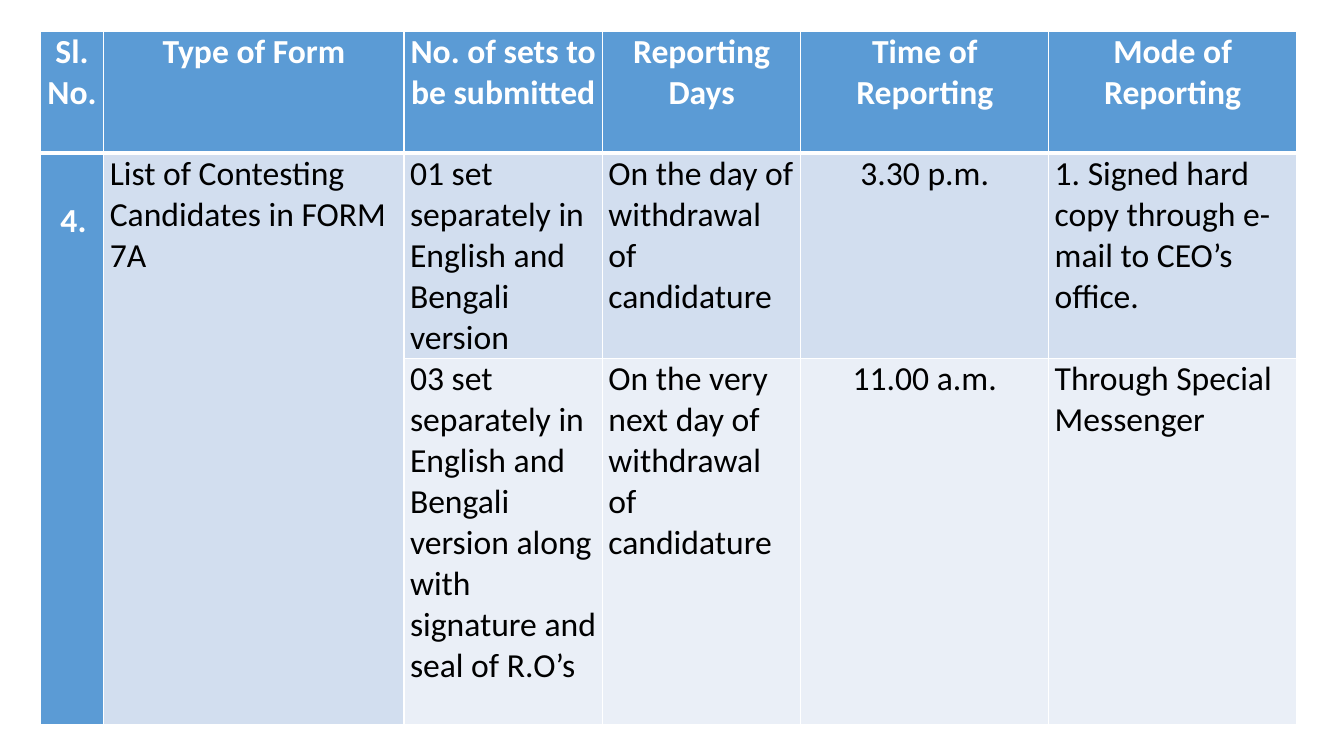
import pptx
import pptx.dml.color
import pptx.enum.text
import pptx.oxml.ns
import pptx.util
from lxml import etree

Inches = pptx.util.Inches
RGBColor = pptx.dml.color.RGBColor
ALIGN = pptx.enum.text.PP_ALIGN

WHITE = RGBColor(0xFF, 0xFF, 0xFF)
BLACK = RGBColor(0x00, 0x00, 0x00)
HEADER_BLUE = RGBColor(0x5B, 0x9B, 0xD5)
FIRST_BAND = RGBColor(0xD2, 0xDE, 0xEF)
SECOND_BAND = RGBColor(0xEA, 0xEF, 0xF7)

COLUMN_WIDTHS = [0.63, 2.98, 1.97, 1.97, 2.46, 2.46]
ROW_HEIGHTS = [1.21, 2.02, 3.64]
BAND_FILLS = [HEADER_BLUE, FIRST_BAND, SECOND_BAND]
SERIAL_COLUMN, FORM_COLUMN, TIME_COLUMN = 0, 1, 4

REPORTING_ROWS = [
    ["Sl. No.", "Type of Form", "No. of sets to be submitted",
     "Reporting Days", "Time of Reporting", "Mode of Reporting"],
    ["4.", "List of Contesting Candidates in FORM 7A",
     "01 set separately in English and Bengali version",
     "On the day of withdrawal of candidature", "3.30 p.m.",
     "1. Signed hard copy through e-mail to CEO’s office."],
    ["", "", "03 set separately in English and Bengali version along with "
     "signature and seal of R.O’s",
     "On the very next day of withdrawal of candidature", "11.00 a.m.",
     "Through Special Messenger"],
]


def set_borders(cell, top, bottom):
    properties = cell._tc.get_or_add_tcPr()
    qn = pptx.oxml.ns.qn
    for side, points in (("L", 1), ("R", 1), ("T", top), ("B", bottom)):
        line = etree.SubElement(properties, qn(f"a:ln{side}"), w=str(pptx.util.Pt(points)))
        fill = etree.SubElement(line, qn("a:solidFill"))
        etree.SubElement(fill, qn("a:srgbClr"), val=str(WHITE))


def format_cell(cell, text, row, column):
    is_header = row == 0
    is_strong = is_header or column == SERIAL_COLUMN
    set_borders(cell, top=3 if row == 1 else 1, bottom=3 if is_header else 1)
    cell.fill.solid()
    cell.fill.fore_color.rgb = HEADER_BLUE if is_strong else BAND_FILLS[row]
    cell.margin_left = cell.margin_right = Inches(0.06)
    cell.margin_top = cell.margin_bottom = 0
    cell.text_frame.text = text
    paragraph = cell.text_frame.paragraphs[0]
    is_centred = is_header or column == TIME_COLUMN
    paragraph.alignment = ALIGN.CENTER if is_centred else ALIGN.LEFT
    paragraph.font.size = pptx.util.Pt(24)
    for run in paragraph.runs:
        run.font.name = "Calibri"
        run.font.size = pptx.util.Pt(24)
        run.font.bold = is_strong
        run.font.color.rgb = WHITE if is_strong else BLACK


def add_reporting_table(slide, left, top, width, height):
    table = slide.shapes.add_table(
        len(ROW_HEIGHTS), len(COLUMN_WIDTHS), left, top, width, height).table
    for column, share in zip(table.columns, COLUMN_WIDTHS):
        column.width = int(width * share / sum(COLUMN_WIDTHS))
    for row, share in zip(table.rows, ROW_HEIGHTS):
        row.height = int(height * share / sum(ROW_HEIGHTS))
    for row, texts in enumerate(REPORTING_ROWS):
        for column, text in enumerate(texts):
            format_cell(table.cell(row, column), text, row, column)
    for column in (SERIAL_COLUMN, FORM_COLUMN):
        table.cell(1, column).merge(table.cell(2, column))
    serial_number = table.cell(1, SERIAL_COLUMN)
    serial_number.margin_left = Inches(0.2)
    serial_number.margin_top = Inches(0.47)


def main():
    presentation = pptx.Presentation()
    presentation.slide_width = Inches(13.33)
    presentation.slide_height = Inches(7.5)
    slide = presentation.slides.add_slide(presentation.slide_layouts[6])
    add_reporting_table(slide, Inches(0.4), Inches(0.31), Inches(12.46), Inches(6.87))
    presentation.save("out.pptx")


if __name__ == "__main__":
    main()
